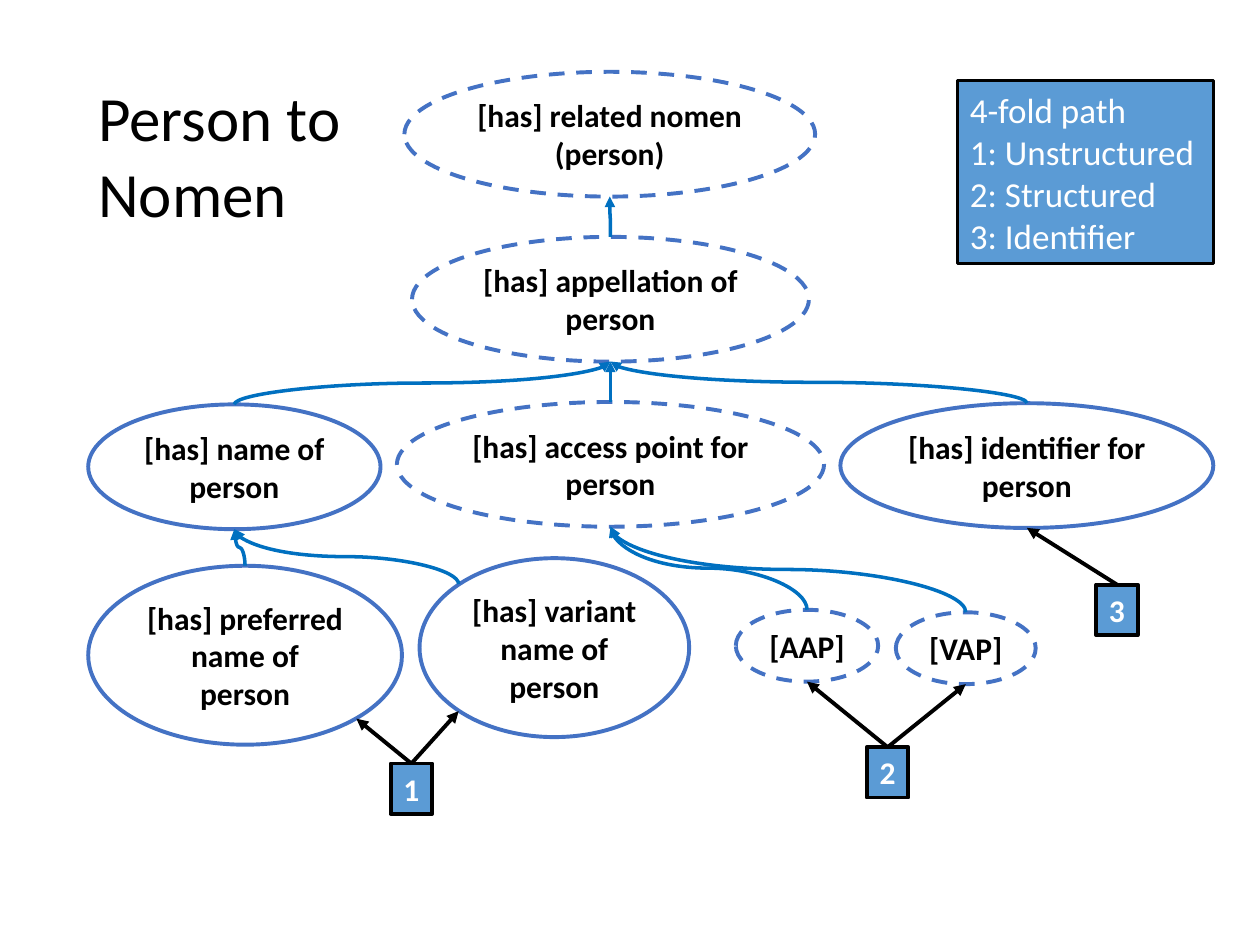
import pptx
import pptx.util
import pptx.dml.color
import pptx.enum.dml
import pptx.enum.shapes
import pptx.enum.text
import pptx.oxml.xmlchemy

Inches = pptx.util.Inches
Pt = pptx.util.Pt
RGBColor = pptx.dml.color.RGBColor
Shape = pptx.enum.shapes.MSO_SHAPE
Link = pptx.enum.shapes.MSO_CONNECTOR
Align = pptx.enum.text.PP_ALIGN
Element = pptx.oxml.xmlchemy.OxmlElement

BLACK = RGBColor(0x00, 0x00, 0x00)
WHITE = RGBColor(0xFF, 0xFF, 0xFF)
OUTLINE = RGBColor(0x44, 0x72, 0xC4)
CURVE = RGBColor(0x00, 0x70, 0xC0)
PANEL = RGBColor(0x5B, 0x9B, 0xD5)

DIAG = 0.71
TOP, BOTTOM = (0, -1), (0, 1)
TOP_LEFT = (-DIAG, -DIAG)
LOW_LEFT, LOW_RIGHT = (-DIAG, DIAG), (DIAG, DIAG)


def spot(shape, side):
    """Point on the edge of a shape, with side as offsets from its centre."""
    half_w, half_h = shape.width / 2, shape.height / 2
    return (int(shape.left + half_w * (1 + side[0])),
            int(shape.top + half_h * (1 + side[1])))


class Page:
    font = "Calibri"

    def __init__(self, slide):
        self.slide = slide

    def label(self, shape, text, size, color, bold=False, align=Align.CENTER,
              wrap=False):
        frame = shape.text_frame
        frame.text = text
        frame.word_wrap = wrap
        frame.auto_size = pptx.enum.text.MSO_AUTO_SIZE.NONE
        frame.vertical_anchor = pptx.enum.text.MSO_ANCHOR.MIDDLE
        for para in frame.paragraphs:
            para.alignment = align
            for run in para.runs:
                run.font.name = self.font
                run.font.size = Pt(size)
                run.font.bold = bold
                run.font.color.rgb = color

    def title(self, text, left, top, width, height):
        box = self.slide.shapes.title
        box.left, box.top = Inches(left), Inches(top)
        box.width, box.height = Inches(width), Inches(height)
        self.label(box, text, 36, BLACK, align=Align.LEFT)

    def shape(self, kind, left, top, width, height, line, weight):
        item = self.slide.shapes.add_shape(
            kind, Inches(left), Inches(top), Inches(width), Inches(height))
        item.shadow.inherit = False
        item.line.color.rgb = line
        item.line.width = Pt(weight)
        return item

    def oval(self, text, left, top, width, height, dashed=False):
        item = self.shape(Shape.OVAL, left, top, width, height, OUTLINE, 2.25)
        item.fill.background()
        if dashed:
            item.line.dash_style = pptx.enum.dml.MSO_LINE.DASH
        self.label(item, text, 18, BLACK, bold=True)
        return item

    def block(self, left, top, width, height, weight):
        item = self.shape(Shape.RECTANGLE, left, top, width, height, BLACK, weight)
        item.fill.solid()
        item.fill.fore_color.rgb = PANEL
        return item

    def panel(self, text, left, top, width, height):
        item = self.block(left, top, width, height, 1.5)
        self.label(item, text, 20, WHITE, align=Align.LEFT, wrap=True)

    def badge(self, text, left, top):
        item = self.block(left, top, 0.33, 0.4, 2.25)
        self.label(item, text, 18, WHITE, bold=True)
        return item

    def link(self, kind, start, end, color, weight):
        line = self.slide.shapes.add_connector(kind, *start, *end)
        line.line.color.rgb = color
        line.line.width = Pt(weight)
        head = Element("a:tailEnd")
        head.set("type", "triangle")
        line.get_or_add_ln().append(head)
        line._element.spPr.append(Element("a:effectLst"))
        return line

    def arrow(self, start, end):
        self.link(Link.STRAIGHT, start, end, BLACK, 2.25)

    def curve(self, start, end):
        """Curve that leaves and arrives upright: a level one, turned 270 degrees."""
        mid_x, mid_y = (start[0] + end[0]) // 2, (start[1] + end[1]) // 2
        run, rise = (end[0] - start[0]) // 2, (start[1] - end[1]) // 2
        line = self.link(Link.CURVE, (mid_x - rise, mid_y - run),
                         (mid_x + rise, mid_y + run), CURVE, 2)
        line._element.spPr.xfrm.set("rot", str(270 * 60000))


def main():
    deck = pptx.Presentation()
    deck.slide_width, deck.slide_height = Inches(10), Inches(7.5)
    page = Page(deck.slides.add_slide(deck.slide_layouts[5]))
    page.title("Person to\nNomen", 0.68, 0.57, 2.14, 1.31)

    related = page.oval("[has] related nomen\n(person)", 3.21, 0.57, 3.26, 0.99, True)
    called = page.oval("[has] appellation of\nperson", 3.27, 1.88, 3.15, 0.99, True)
    name = page.oval("[has] name of\nperson", 0.7, 3.21, 2.32, 0.99)
    access = page.oval("[has] access point for\nperson", 3.15, 3.19, 3.39, 0.99, True)
    ident = page.oval("[has] identifier for\nperson", 6.67, 3.2, 2.96, 0.99)
    chosen = page.oval("[has] preferred\nname of\nperson", 0.7, 4.49, 2.49, 1.42)
    other = page.oval("[has] variant\nname of\nperson", 3.33, 4.43, 2.14, 1.42)
    aap = page.oval("[AAP]", 5.84, 4.84, 1.13, 0.57, True)
    vap = page.oval("[VAP]", 7.11, 4.86, 1.11, 0.57, True)

    for child, side, parent in (
            (called, TOP, related), (name, TOP, called), (access, TOP, called),
            (ident, TOP, called), (chosen, TOP, name), (other, TOP_LEFT, name),
            (aap, TOP, access), (vap, TOP, access)):
        page.curve(spot(child, side), spot(parent, BOTTOM))

    page.panel("4-fold path\n1: Unstructured\n2: Structured\n3: Identifier",
               7.6, 0.64, 2.03, 1.45)
    one = page.badge("1", 3.1, 6.06)
    two = page.badge("2", 6.88, 5.93)
    three = page.badge("3", 8.7, 4.64)
    for badge, target, side in (
            (one, chosen, LOW_RIGHT), (one, other, LOW_LEFT), (two, aap, BOTTOM),
            (two, vap, BOTTOM), (three, ident, BOTTOM)):
        page.arrow(spot(badge, TOP), spot(target, side))

    deck.save("out.pptx")


if __name__ == "__main__":
    main()
